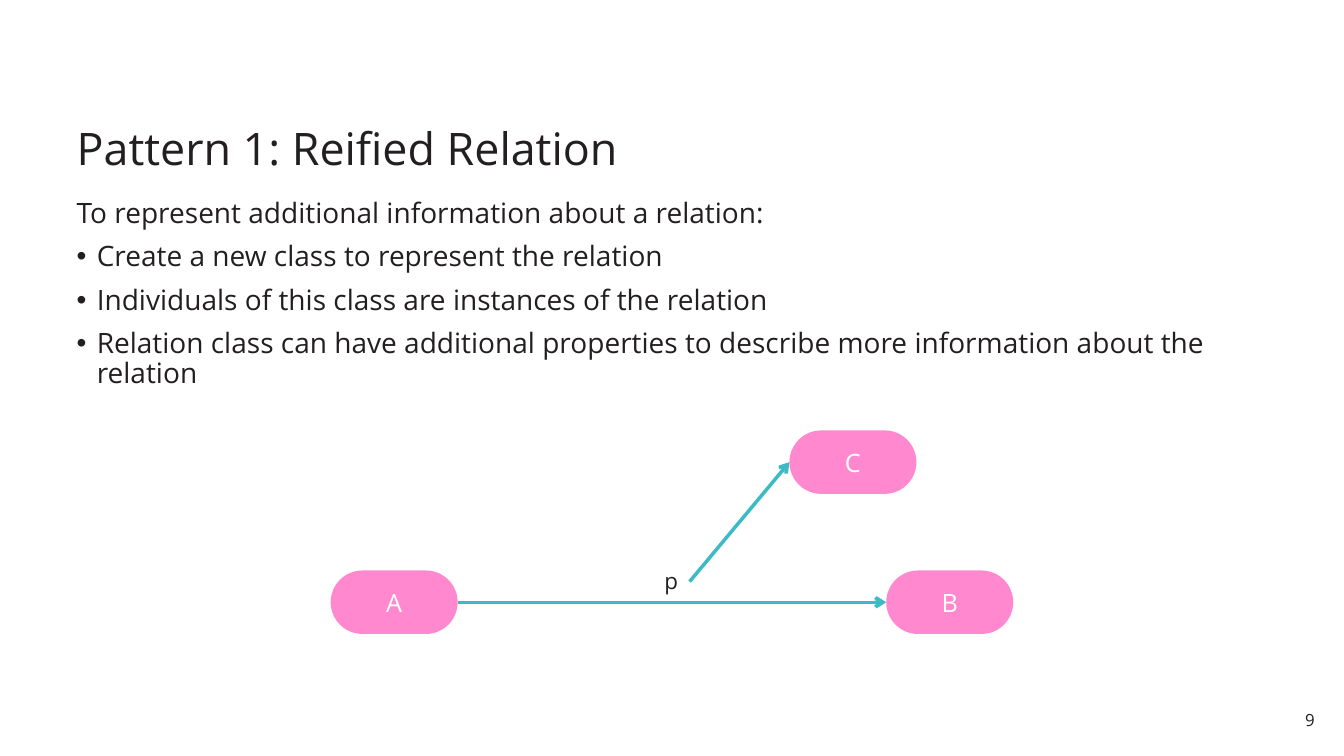
from pptx import Presentation
from pptx.dml.color import RGBColor
from pptx.enum.shapes import MSO_CONNECTOR as Link, MSO_SHAPE as Form
from pptx.enum.text import MSO_ANCHOR as Anchor, MSO_AUTO_SIZE as Fit, PP_ALIGN as Align
from pptx.oxml.ns import qn
from pptx.util import Pt
from lxml.etree import SubElement

PX = 9144
INK, PINK, TEAL, WHITE = "231F20", "FF88CF", "3CBAC6", "FFFFFF"


def color(code):
    return RGBColor.from_string(code)


def write(par, text, size, code=INK):
    run = par.add_run()
    run.text = text
    run.font.name = "Open Sans"
    run.font.size = Pt(size)
    run.font.color.rgb = color(code)


deck = Presentation()
deck.slide_width, deck.slide_height = 1333 * PX, 750 * PX
slide = deck.slides.add_slide(deck.slide_layouts[1])
shapes = slide.shapes
title, body = slide.placeholders

for holder, top, height, anchor in [
    (title, 76, 102, Anchor.BOTTOM),
    (body, 194, 488, Anchor.TOP),
]:
    holder.left, holder.top = 68 * PX, top * PX
    holder.width, holder.height = 1197 * PX, height * PX
    frame = holder.text_frame
    frame.auto_size = Fit.NONE
    frame.word_wrap = True
    frame.vertical_anchor = anchor
    frame.margin_left = frame.margin_right = 8 * PX
    frame.margin_top = frame.margin_bottom = 4 * PX

par = title.text_frame.paragraphs[0]
par.alignment = Align.LEFT
par.line_spacing = 0.9
write(par, "Pattern 1: Reified Relation", 32)

lines = [
    "To represent additional information about a relation:",
    "Create a new class to represent the relation",
    "Individuals of this class are instances of the relation",
    "Relation class can have additional properties to describe more information about the relation",
]
for i, line in enumerate(lines):
    frame = body.text_frame
    par = frame.add_paragraph() if i else frame.paragraphs[0]
    par.alignment = Align.LEFT
    par.line_spacing = 0.88
    par.space_before = Pt(10 if i else 0)
    props = par._p.get_or_add_pPr()
    dent = 20 * PX if i else 0
    props.set("marL", str(dent))
    props.set("indent", str(-dent))
    if i:
        SubElement(props, qn("a:buFont"), typeface="Arial")
        SubElement(props, qn("a:buChar"), char="•")
    else:
        SubElement(props, qn("a:buNone"))
    write(par, line, 20)

nodes = {}
for name, left, top in [("A", 328, 566), ("B", 879, 566), ("C", 783, 427)]:
    node = shapes.add_shape(Form.ROUNDED_RECTANGLE, left * PX, top * PX, 126 * PX, 63 * PX)
    node.adjustments[0] = 0.5
    node.shadow.inherit = False
    node.fill.solid()
    node.fill.fore_color.rgb = color(PINK)
    node.line.fill.background()
    frame = node.text_frame
    frame.word_wrap = False
    frame.vertical_anchor = Anchor.MIDDLE
    par = frame.paragraphs[0]
    par.alignment = Align.CENTER
    write(par, name, 18, WHITE)
    nodes[name] = node

for start, x, y, end in [("A", 454, 598, "B"), (None, 684, 577, "C")]:
    arrow = shapes.add_connector(Link.STRAIGHT, x * PX, y * PX, x * PX, y * PX)
    if start:
        arrow.begin_connect(nodes[start], 3)
    arrow.end_connect(nodes[end], 1)
    arrow.line.color.rgb = color(TEAL)
    arrow.line.width = Pt(2.5)
    SubElement(arrow.line._get_or_add_ln(), qn("a:tailEnd"), type="arrow")
    SubElement(arrow._element.spPr, qn("a:effectLst"))

for text, left, top, width, height, size, align, pad, wrap in [
    ("p", 649, 558, 34, 37, 16, Align.LEFT, 10, False),
    ("9", 1265, 698, 47, 31, 12, Align.RIGHT, 8, True),
]:
    box = shapes.add_textbox(left * PX, top * PX, width * PX, height * PX)
    frame = box.text_frame
    frame.word_wrap = wrap
    frame.margin_left = frame.margin_right = pad * PX
    frame.margin_top = frame.margin_bottom = (6 if wrap else 5) * PX
    par = frame.paragraphs[0]
    par.alignment = align
    write(par, text, size)

deck.save("out.pptx")
